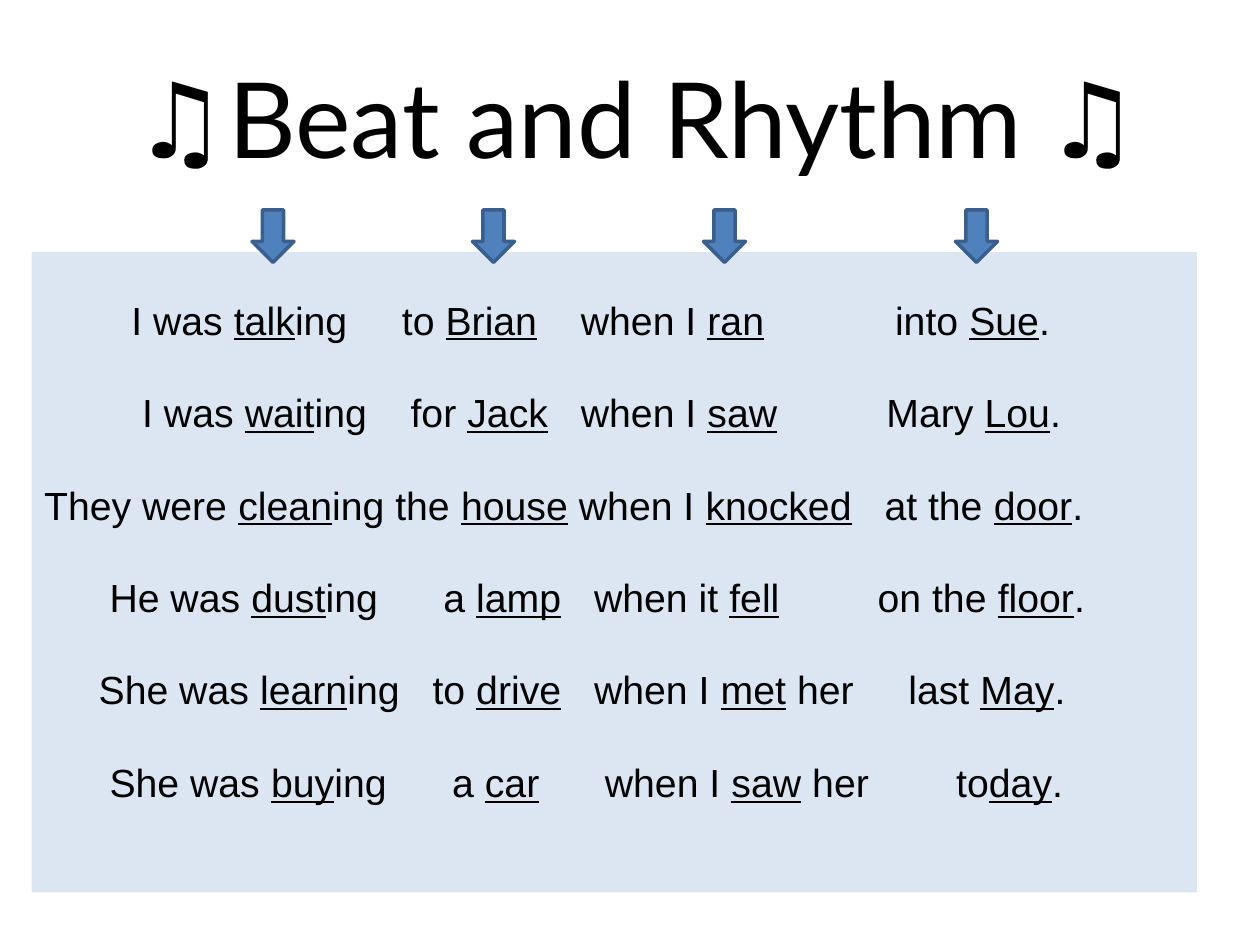
from dataclasses import dataclass

from lxml.etree import SubElement
from pptx import Presentation
from pptx.dml.color import RGBColor
from pptx.enum.shapes import MSO_SHAPE as Preset
from pptx.enum.text import MSO_ANCHOR as Anchor, MSO_AUTO_SIZE as AutoSize, PP_ALIGN as Align
from pptx.oxml.ns import qn
from pptx.util import Pt


@dataclass(frozen=True)
class Theme:
    ink: RGBColor = RGBColor(0x00, 0x00, 0x00)
    panel: RGBColor = RGBColor(0xDC, 0xE6, 0xF2)
    arrow: RGBColor = RGBColor(0x4F, 0x81, 0xBD)
    arrow_edge: RGBColor = RGBColor(0x3A, 0x5F, 0x8C)
    title_size: float = 60
    verse_size: float = 22.4
    gap_unit: float = 6.23
    note_font: str = "Calibri"
    title_font: str = "Lato"
    verse_font: str = "Arial"


@dataclass(frozen=True)
class Box:
    left: float
    top: float
    width: float
    height: float


@dataclass(frozen=True)
class Beat:
    gap: int
    lead: str
    stressed: str
    tail: str = ""


THEME = Theme()
TITLE_BOX = Box(24, 21.5, 680, 90)
VERSE_BOX = Box(18, 144, 666, 366)
BEAT_ARROWS = [Box(left, 120, 24, 30) for left in (144, 270, 402, 546)]
TITLE_PARTS = [
    ("♫", THEME.note_font),
    ("Beat and Rhythm", THEME.title_font),
    (" ♫", THEME.note_font),
]
VERSES = [
    [Beat(8, "I was ", "talk", "ing"), Beat(5, "to ", "Brian"),
     Beat(4, "when I ", "ran"), Beat(12, "into ", "Sue", ".")],
    [Beat(9, "I was ", "wait", "ing"), Beat(4, "for ", "Jack"),
     Beat(3, "when I ", "saw"), Beat(10, "Mary ", "Lou", ".")],
    [Beat(0, "They were ", "clean", "ing"), Beat(1, "the ", "house"),
     Beat(1, "when I ", "knocked"), Beat(3, "at the ", "door", ".")],
    [Beat(6, "He was ", "dust", "ing"), Beat(6, "a ", "lamp"),
     Beat(3, "when it ", "fell"), Beat(9, "on the ", "floor", ".")],
    [Beat(5, "She was ", "learn", "ing"), Beat(3, "to ", "drive"),
     Beat(3, "when I ", "met", " her"), Beat(5, "last ", "May", ".")],
    [Beat(6, "She was ", "buy", "ing"), Beat(6, "a ", "car"),
     Beat(6, "when I ", "saw", " her"), Beat(8, "to", "day", ".")],
]


def place(shape, box: Box) -> None:
    shape.left, shape.top = Pt(box.left), Pt(box.top)
    shape.width, shape.height = Pt(box.width), Pt(box.height)


def add_run(paragraph, text: str, font: str, size: float):
    run = paragraph.add_run()
    run.text = text
    run.font.name = font
    run.font.size = Pt(size)
    run.font.color.rgb = THEME.ink
    return run


def fill_title(title) -> None:
    place(title, TITLE_BOX)
    title.text_frame.auto_size = AutoSize.NONE
    title.text_frame.vertical_anchor = Anchor.MIDDLE
    heading = title.text_frame.paragraphs[0]
    heading.alignment = Align.CENTER
    for text, font in TITLE_PARTS:
        add_run(heading, text, font, THEME.title_size)


def add_verse_run(paragraph, text: str):
    return add_run(paragraph, text, THEME.verse_font, THEME.verse_size)


def add_gap(paragraph, units: int) -> None:
    spacing = round((units - 1) * THEME.gap_unit * 100)
    add_verse_run(paragraph, " ").font._element.set("spc", str(spacing))


def indent_verse(paragraph, units: int) -> None:
    properties = paragraph._p.get_or_add_pPr()
    properties.set("marL", str(int(Pt(units * THEME.gap_unit))))
    properties.set("indent", "0")
    SubElement(properties, qn("a:buNone"))


def write_verse(paragraph, verse: list[Beat]) -> None:
    paragraph.line_spacing = 1.8
    indent_verse(paragraph, verse[0].gap)
    for index, beat in enumerate(verse):
        if index:
            add_gap(paragraph, beat.gap)
        add_verse_run(paragraph, beat.lead)
        add_verse_run(paragraph, beat.stressed).font.underline = True
        if beat.tail:
            add_verse_run(paragraph, beat.tail)


def fill_verses(body) -> None:
    place(body, VERSE_BOX)
    body.fill.solid()
    body.fill.fore_color.rgb = THEME.panel
    frame = body.text_frame
    frame.auto_size = AutoSize.NONE
    frame.vertical_anchor = Anchor.TOP
    for index, verse in enumerate(VERSES):
        write_verse(frame.add_paragraph() if index else frame.paragraphs[0], verse)


def add_beat_arrow(slide, box: Box) -> None:
    arrow = slide.shapes.add_shape(
        Preset.DOWN_ARROW, Pt(box.left), Pt(box.top), Pt(box.width), Pt(box.height)
    )
    arrow.shadow.inherit = False
    arrow.fill.solid()
    arrow.fill.fore_color.rgb = THEME.arrow
    arrow.line.color.rgb = THEME.arrow_edge
    arrow.line.width = Pt(2)


def main() -> None:
    deck = Presentation()
    deck.slide_width, deck.slide_height = Pt(720), Pt(540)
    slide = deck.slides.add_slide(deck.slide_layouts[1])
    fill_title(slide.shapes.title)
    fill_verses(slide.placeholders[1])
    for box in BEAT_ARROWS:
        add_beat_arrow(slide, box)
    deck.save("out.pptx")


if __name__ == "__main__":
    main()
